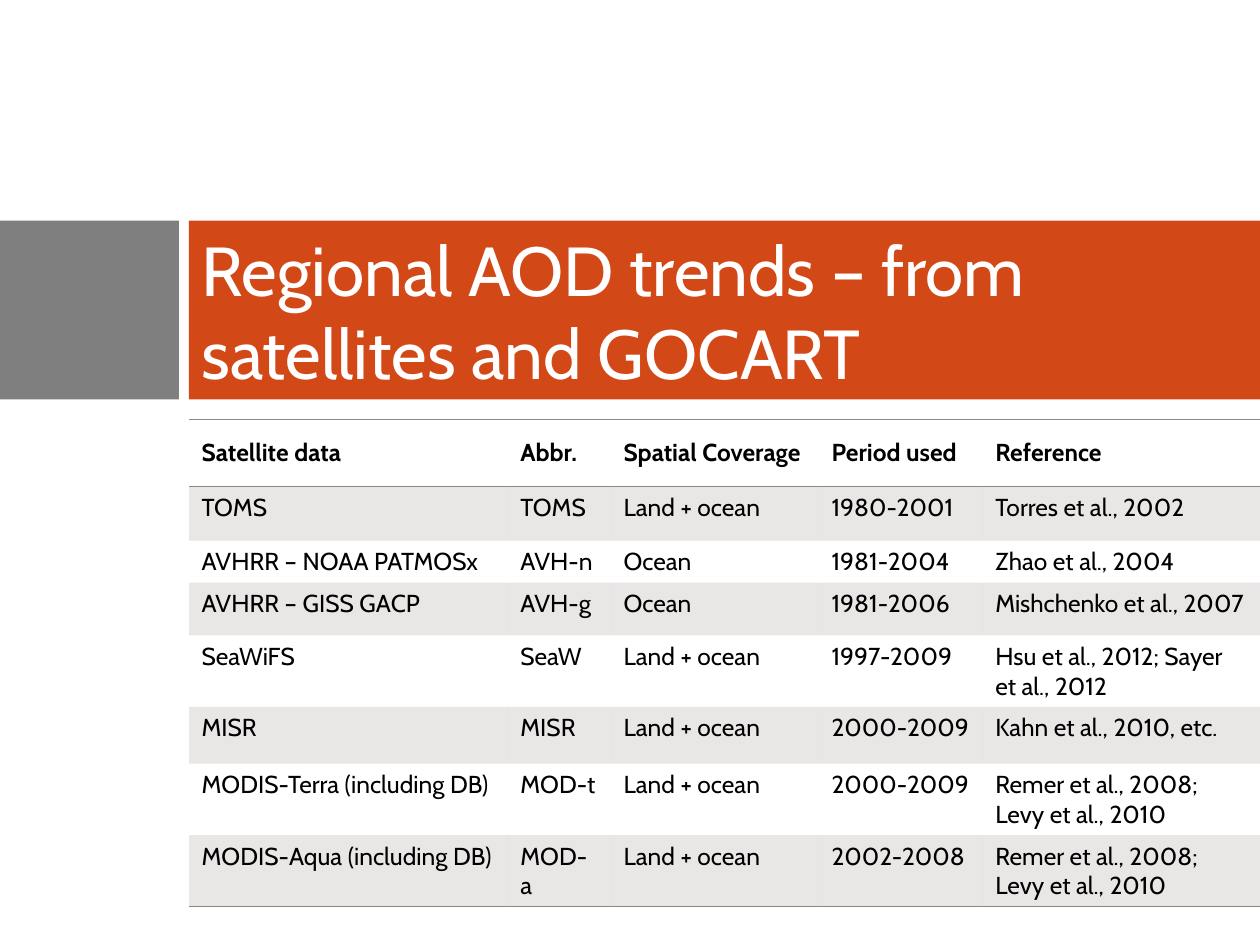
from lxml.etree import SubElement
from pptx import Presentation
from pptx.dml.color import RGBColor
from pptx.enum.shapes import MSO_SHAPE
from pptx.enum.text import MSO_ANCHOR
from pptx.oxml import parse_xml
from pptx.oxml.ns import nsdecls, qn
from pptx.util import Inches, Pt

COLORS = {"gray": "7F7F7F", "orange": "D34817", "white": "FFFFFF",
          "black": "000000", "taupe": "918485"}
FORMATS = {
    "title": {"name": "Cabin", "size": Pt(39.6), "bold": False},
    "header": {"name": "Cabin", "size": Pt(14), "bold": True},
    "body": {"name": "Cabin", "size": Pt(14), "bold": False},
}
NO_GRID_STYLE = "{2D5ABB26-0587-4C30-8999-92F81FD0307C}"

# Layout in inches: a narrow left column and a wide content column
SLIDE_W, SLIDE_H = 10, 7.5
CONTENT_X, CONTENT_W = 1.5, 8.5
BAND_Y, BAND_H = 1.75, 1.42
TABLE_Y = 3.33
COL_WIDTHS = [2.53, 0.82, 1.65, 1.3, 2.2]
ROW_HEIGHTS = [0.53, 0.43, 0.33, 0.42, 0.45, 0.45, 0.55, 0.55]

ROWS = [
    ["Satellite data", "Abbr.", "Spatial Coverage", "Period used", "Reference"],
    ["TOMS", "TOMS", "Land + ocean", "1980-2001", "Torres et al., 2002"],
    ["AVHRR – NOAA PATMOSx", "AVH-n", "Ocean", "1981-2004", "Zhao et al., 2004"],
    ["AVHRR – GISS GACP", "AVH-g", "Ocean", "1981-2006", "Mishchenko et al., 2007"],
    ["SeaWiFS", "SeaW", "Land + ocean", "1997-2009",
     "Hsu et al., 2012; Sayer et al., 2012"],
    ["MISR", "MISR", "Land + ocean", "2000-2009", "Kahn et al., 2010, etc."],
    ["MODIS-Terra (including DB)", "MOD-t", "Land + ocean", "2000-2009",
     "Remer et al., 2008; Levy et al., 2010"],
    ["MODIS-Aqua (including DB)", "MOD-a", "Land + ocean", "2002-2008",
     "Remer et al., 2008; Levy et al., 2010"],
]


def rgb(color):
    return RGBColor.from_string(COLORS[color])


def write(tf, text, style, color):
    p = tf.paragraphs[0]
    r = p.add_run()
    r.text = text
    for key, value in FORMATS[style].items():
        setattr(r.font, key, value)
    r.font.color.rgb = rgb(color)


def add_block(s, x, y, w, h, color):
    sp = s.shapes.add_shape(MSO_SHAPE.RECTANGLE, *map(Inches, (x, y, w, h)))
    sp.shadow.inherit = False
    sp.fill.solid()
    sp.fill.fore_color.rgb = rgb(color)
    sp.line.fill.background()


def add_title(s, text, x, y, w, h):
    tf = s.shapes.add_textbox(*map(Inches, (x, y, w, h))).text_frame
    tf.word_wrap = True
    tf.vertical_anchor = MSO_ANCHOR.MIDDLE
    write(tf, text, "title", "white")


def shade(cell, color, percent):
    cell.fill.solid()
    cell.fill.fore_color.rgb = rgb(color)
    clr = cell._tc.tcPr.find(".//" + qn("a:srgbClr"))
    SubElement(clr, qn("a:alpha"), val=str(percent * 1000))


def add_borders(cell, sides):
    # Border lines come before the fill in the cell properties
    for i, side in enumerate(sides):
        cell._tc.get_or_add_tcPr().insert(i, parse_xml(
            f'<a:{side} {nsdecls("a")} w="{Pt(1)}"><a:solidFill>'
            f'<a:srgbClr val="{COLORS["taupe"]}"/></a:solidFill></a:{side}>'))


def add_data_table(s, rows, x, y):
    frame = s.shapes.add_table(
        len(rows), len(COL_WIDTHS), Inches(x), Inches(y),
        Inches(sum(COL_WIDTHS)), Inches(sum(ROW_HEIGHTS)))
    table = frame.table
    table.first_row = table.horz_banding = False
    table._tbl.tblPr.find(qn("a:tableStyleId")).text = NO_GRID_STYLE
    for col, width in zip(table.columns, COL_WIDTHS):
        col.width = Inches(width)
    for row, height in zip(table.rows, ROW_HEIGHTS):
        row.height = Inches(height)

    borders = {0: ("lnT", "lnB"), len(rows) - 1: ("lnB",)}
    for i, texts in enumerate(rows):
        for j, text in enumerate(texts):
            cell = table.cell(i, j)
            write(cell.text_frame, text, "body" if i else "header", "black")
            cell.vertical_anchor = MSO_ANCHOR.TOP if i else MSO_ANCHOR.MIDDLE
            if i % 2:
                shade(cell, "taupe", 20)
            else:
                cell.fill.background()
            add_borders(cell, borders.get(i, ()))


def main():
    prs = Presentation()
    prs.slide_width, prs.slide_height = Inches(SLIDE_W), Inches(SLIDE_H)
    s = prs.slides.add_slide(prs.slide_layouts[6])

    # Title band
    add_block(s, 0, BAND_Y, BAND_H, BAND_H, "gray")
    add_block(s, CONTENT_X, BAND_Y, CONTENT_W, BAND_H, "orange")
    add_title(s, "Regional AOD trends – from satellites and GOCART",
              CONTENT_X, 1.92, 8.33, 1.08)

    # Satellite data sets
    add_data_table(s, ROWS, CONTENT_X, TABLE_Y)
    prs.save("out.pptx")


if __name__ == "__main__":
    main()
